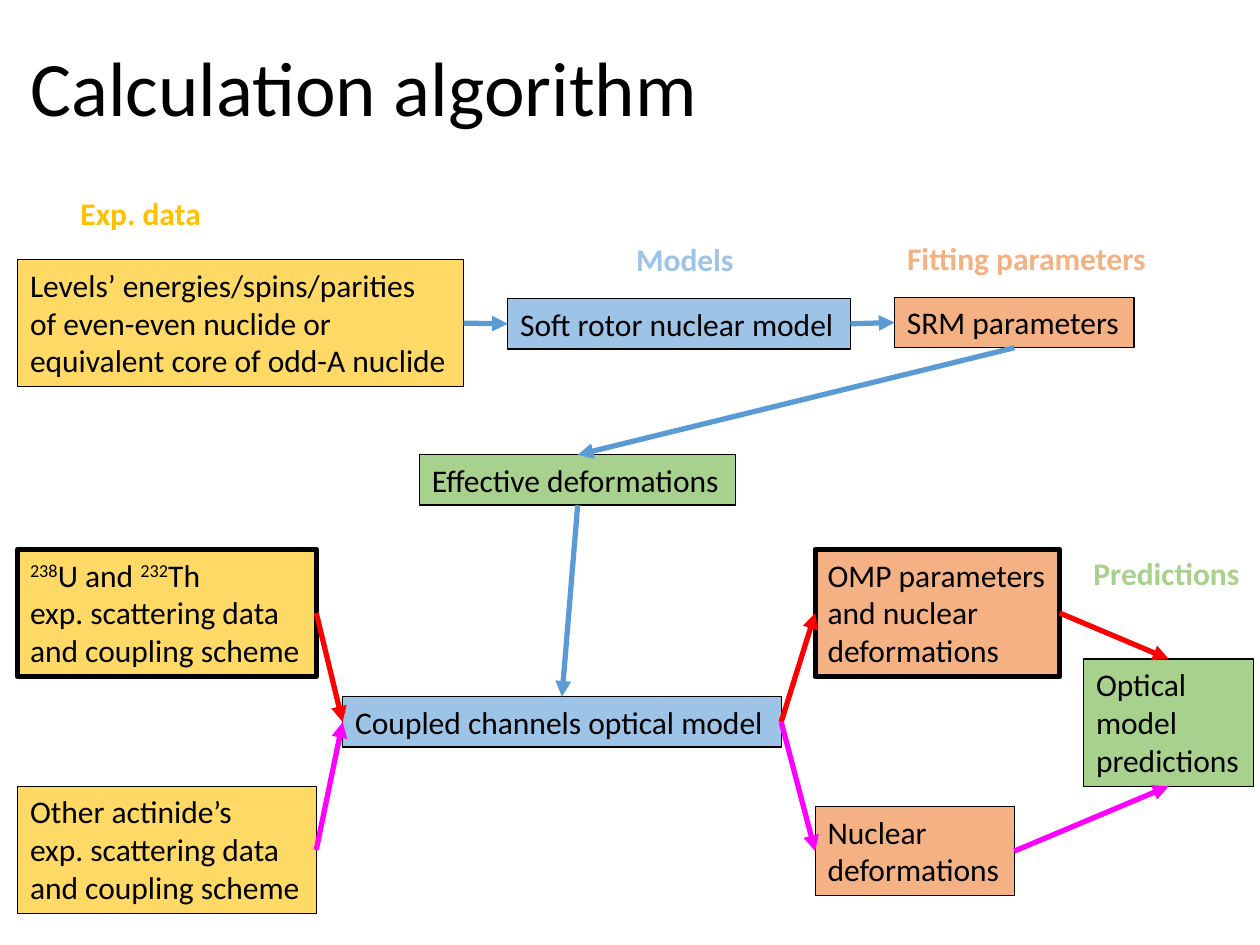
from lxml import etree
from pptx import Presentation
from pptx.dml.color import RGBColor
from pptx.enum import shapes, text
from pptx.oxml.ns import qn
from pptx.util import Inches, Pt

COLORS = {
    "black": "000000", "data": "FFD966", "data label": "FFC000",
    "model": "9DC3E6", "fit": "F4B183", "result": "A9D18E",
    "blue": "5B9BD5", "red": "FF0000", "magenta": "FF00FF",
}
TOP, LEFT, BOTTOM, RIGHT = range(4)  # connection sites of a rectangle


def color(name):
    return RGBColor.from_string(COLORS[name])


def write(shape, lines, ink="black", bold=False):
    """Fill a shape with lines; a line is a list of spans, ^ marks superscript."""
    frame = shape.text_frame
    frame.word_wrap = False
    frame.auto_size = text.MSO_AUTO_SIZE.SHAPE_TO_FIT_TEXT
    frame.vertical_anchor = text.MSO_ANCHOR.TOP
    for number, spans in enumerate(lines):
        para = frame.add_paragraph() if number else frame.paragraphs[0]
        para.alignment = text.PP_ALIGN.LEFT
        for content in spans:
            span = para.add_run()
            span.text = content.lstrip("^")
            span.font.name = "Calibri"
            span.font.size = Pt(18)
            span.font.bold = bold
            span.font.color.rgb = color(ink)
            if content.startswith("^"):
                span._r.get_or_add_rPr().set("baseline", "30000")


deck = Presentation()
deck.slide_width, deck.slide_height = Inches(10), Inches(7.5)
page = deck.slides.add_slide(deck.slide_layouts[5])

# Title
title = page.shapes.title
title.left, title.top = Inches(0.14), Inches(0)
title.width, title.height = Inches(9.72), Inches(1.45)
title.text_frame.text = "Calculation algorithm"
title.text_frame.vertical_anchor = text.MSO_ANCHOR.MIDDLE
para = title.text_frame.paragraphs[0]
para.alignment = text.PP_ALIGN.LEFT
para.line_spacing = 0.9
para.runs[0].font.name = "Calibri"
para.runs[0].font.size = Pt(44)
para.runs[0].font.color.rgb = color("black")

# Boxes: name, left, top, width, fill, outline, lines
scattering = [["exp. scattering data"], ["and coupling scheme"]]
box_rows = [
    ("main data", 0.14, 4.36, 2.37, "data", 3,
     [["^238", "U and ", "^232", "Th"]] + scattering),
    ("levels", 0.14, 2.06, 3.54, "data", 0.75,
     [["Levels’ energies/spins/parities"], ["of even-even nuclide or"],
      ["equivalent core of odd-A nuclide"]]),
    ("optical model", 2.72, 5.53, 3.48, "model", 0.75, [["Coupled channels optical model"]]),
    ("rotor model", 4.03, 2.37, 2.72, "model", 0.75, [["Soft rotor nuclear model"]]),
    ("effective", 3.33, 3.61, 2.51, "result", 0.75, [["Effective deformations"]]),
    ("other data", 0.14, 6.24, 2.37, "data", 0.75, [["Other actinide’s"]] + scattering),
    ("rotor fit", 7.1, 2.36, 1.9, "fit", 0.75, [["SRM parameters"]]),
    ("optical fit", 6.47, 4.36, 1.94, "fit", 3,
     [["OMP parameters"], ["and nuclear"], ["deformations"]]),
    ("nuclear fit", 6.47, 6.4, 1.58, "fit", 0.75, [["Nuclear"], ["deformations"]]),
    ("predictions", 8.6, 5.23, 1.35, "result", 0.75,
     [["Optical"], ["model"], ["predictions"]]),
]
heights = {1: 0.4, 2: 0.71, 3: 1.01}  # by number of lines
boxes = {}
for name, left, top, width, fill, outline, lines in box_rows:
    box = page.shapes.add_shape(
        shapes.MSO_SHAPE.RECTANGLE, Inches(left), Inches(top),
        Inches(width), Inches(heights[len(lines)]))
    box.shadow.inherit = False
    box.fill.solid()
    box.fill.fore_color.rgb = color(fill)
    box.line.color.rgb = color("black")
    box.line.width = Pt(outline)
    write(box, lines)
    boxes[name] = box

# Arrows between boxes
arrow_rows = [
    ("levels", RIGHT, "rotor model", LEFT, "blue"),
    ("rotor model", RIGHT, "rotor fit", LEFT, "blue"),
    ("rotor fit", BOTTOM, "effective", TOP, "blue"),
    ("effective", BOTTOM, "optical model", TOP, "blue"),
    ("main data", RIGHT, "optical model", LEFT, "red"),
    ("other data", RIGHT, "optical model", LEFT, "magenta"),
    ("optical model", RIGHT, "optical fit", LEFT, "red"),
    ("optical model", RIGHT, "nuclear fit", LEFT, "magenta"),
    ("optical fit", RIGHT, "predictions", TOP, "red"),
    ("nuclear fit", RIGHT, "predictions", BOTTOM, "magenta"),
]
for source, start, target, end, ink in arrow_rows:
    arrow = page.shapes.add_connector(shapes.MSO_CONNECTOR.STRAIGHT, 0, 0, 0, 0)
    arrow.begin_connect(boxes[source], start)
    arrow.end_connect(boxes[target], end)
    arrow.line.color.rgb = color(ink)
    arrow.line.width = Pt(3)
    etree.SubElement(arrow.line._get_or_add_ln(), qn("a:tailEnd"), type="triangle")
    etree.SubElement(arrow._element.spPr, qn("a:effectLst"))

# Group labels
for label, left, top, width, ink in [
    ("Exp. data", 0.54, 1.49, 1.17, "data label"),
    ("Models", 4.95, 1.86, 0.98, "model"),
    ("Fitting parameters", 7.1, 1.85, 2.12, "fit"),
    ("Predictions", 8.58, 4.35, 1.37, "result"),
]:
    box = page.shapes.add_textbox(Inches(left), Inches(top), Inches(width), Inches(0.4))
    write(box, [[label]], ink, bold=True)

deck.save("out.pptx")
